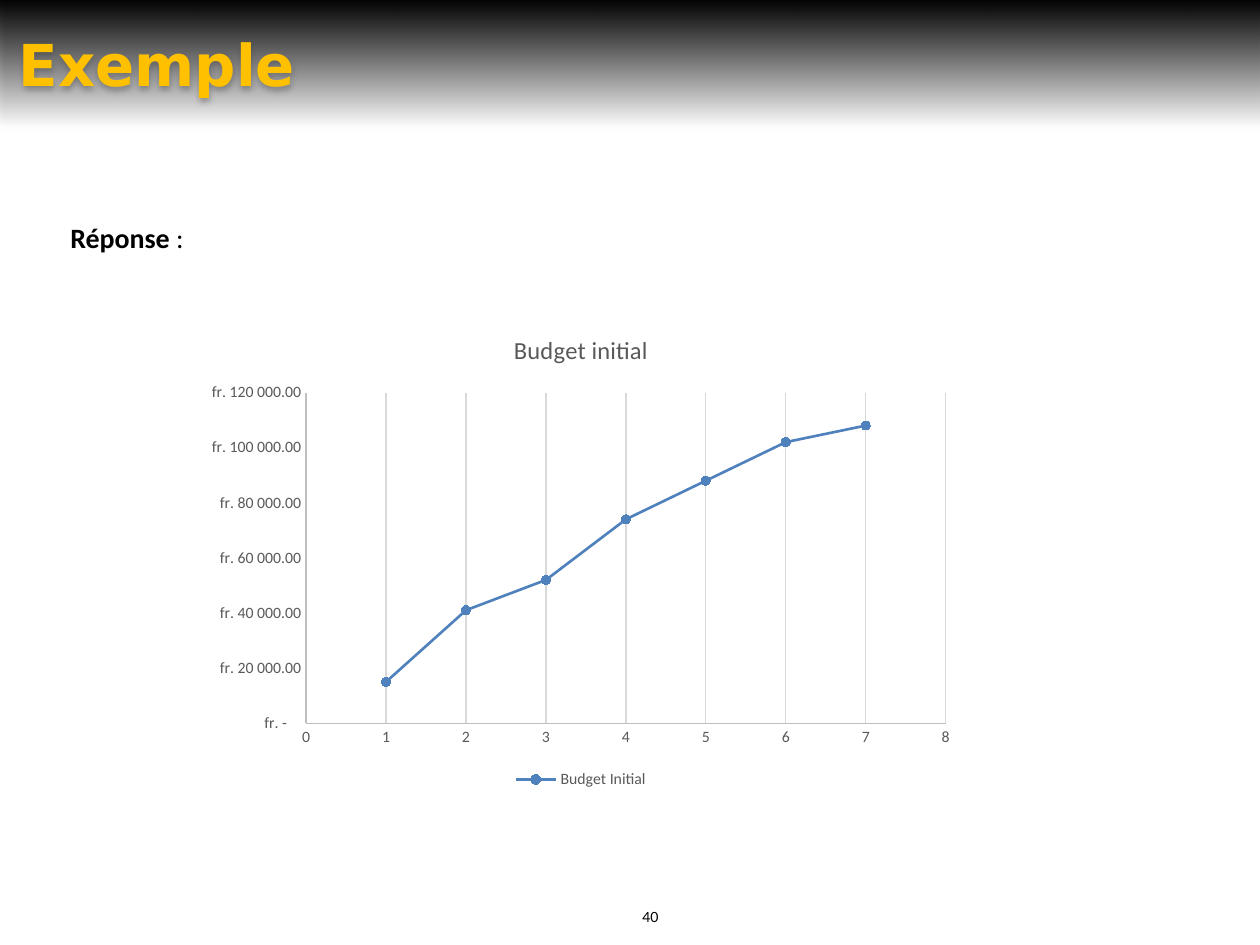
from dataclasses import dataclass

from lxml import etree
from pptx import Presentation
from pptx.chart.data import XyChartData
from pptx.dml.color import RGBColor
from pptx.enum.chart import XL_CHART_TYPE, XL_LEGEND_POSITION, XL_MARKER_STYLE, XL_TICK_MARK
from pptx.enum.shapes import MSO_SHAPE
from pptx.enum.text import MSO_ANCHOR, PP_ALIGN
from pptx.oxml import parse_xml
from pptx.oxml.ns import nsdecls, qn
from pptx.util import Inches, Pt

SCATTER = XL_CHART_TYPE.XY_SCATTER_LINES
BOTTOM = XL_LEGEND_POSITION.BOTTOM
CIRCLE = XL_MARKER_STYLE.CIRCLE
NO_TICK = XL_TICK_MARK.NONE
RECTANGLE = MSO_SHAPE.RECTANGLE
TOP, MIDDLE = MSO_ANCHOR.TOP, MSO_ANCHOR.MIDDLE
LEFT = PP_ALIGN.LEFT

WIDTH, HEIGHT = Inches(10), Inches(7.5)
COLUMNS, ROWS = 100, 75
COLORS = {
    "white": "FFFFFF",
    "black": "000000",
    "fade": "4B4B4B",
    "gold": "FFC000",
    "label": "595959",
    "axis": "BFBFBF",
    "grid": "D9D9D9",
    "series": "4F81BD",
}
BUDGET = [15000, 41000, 52000, 74000, 88000, 102000, 108000]
FRANCS = '"fr. "# ##0.00;"fr. "-# ##0.00;"fr. -"_0_0'


@dataclass(frozen=True)
class Area:
    column: float
    row: float
    columns: float
    rows: float

    def bounds(self) -> tuple[int, int, int, int]:
        across, down = WIDTH / COLUMNS, HEIGHT / ROWS
        return (round(self.column * across), round(self.row * down),
                round(self.columns * across), round(self.rows * down))


@dataclass(frozen=True)
class Span:
    text: str
    bold: bool = False


def color(name: str) -> RGBColor:
    return RGBColor.from_string(COLORS[name])


def style_font(font, size: float, shade: str, face: str = "Calibri", bold: bool = False) -> None:
    font.size, font.name, font.bold = Pt(size), face, bold
    font.color.rgb = color(shade)


def style_line(line, shade: str, width: float) -> None:
    line.color.rgb = color(shade)
    line.width = Pt(width)


def write_text(box, *spans: Span, size: float, face: str, shade: str = "black",
               anchor=TOP, margins=(0.1, 0.05, 0.1, 0.05)) -> None:
    frame = box.text_frame
    frame.word_wrap = True
    frame.vertical_anchor = anchor
    (frame.margin_left, frame.margin_top,
     frame.margin_right, frame.margin_bottom) = map(Inches, margins)
    para = frame.paragraphs[0]
    para.alignment = LEFT
    for span in spans:
        run = para.add_run()
        run.text = span.text
        style_font(run.font, size, shade, face, span.bold)


def add_rectangle(page, area: Area):
    shape = page.shapes.add_shape(RECTANGLE, *area.bounds())
    shape.shadow.inherit = False
    return shape


def add_backdrop(page) -> None:
    backdrop = add_rectangle(page, Area(0, 0, COLUMNS, ROWS))
    backdrop.fill.solid()
    backdrop.fill.fore_color.rgb = color("white")
    style_line(backdrop.line, "white", 2)


def add_banner(page, title: str) -> None:
    banner = add_rectangle(page, Area(0, 0, 100.2, 10))
    banner.line.fill.background()
    properties = banner._element.spPr
    gradient = parse_xml(
        f'<a:gradFill {nsdecls("a")} rotWithShape="1"><a:gsLst>'
        f'<a:gs pos="0"><a:srgbClr val="{COLORS["fade"]}"><a:alpha val="0"/></a:srgbClr></a:gs>'
        f'<a:gs pos="100000"><a:srgbClr val="{COLORS["black"]}"/></a:gs>'
        '</a:gsLst><a:lin ang="16200000" scaled="0"/></a:gradFill>')
    properties.find(qn("a:prstGeom")).addnext(gradient)
    shadow = etree.SubElement(properties.find(qn("a:effectLst")), qn("a:outerShdw"),
                              blurRad=str(Pt(3.1)), dist=str(Pt(1.8)),
                              dir="5400000", rotWithShape="0")
    tint = etree.SubElement(shadow, qn("a:srgbClr"), val=COLORS["black"])
    etree.SubElement(tint, qn("a:alpha"), val="35000")
    write_text(banner, Span(title, bold=True), size=33, face="DejaVu Sans", shade="gold",
               anchor=MIDDLE, margins=(0.15,) * 4)


def style_axis(axis, maximum: float, step: float) -> None:
    axis.minimum_scale, axis.maximum_scale, axis.major_unit = 0, maximum, step
    axis.major_tick_mark = axis.minor_tick_mark = NO_TICK
    style_font(axis.tick_labels.font, 9, "label")
    style_line(axis.format.line, "axis", 0.75)


def add_budget_chart(page, area: Area) -> None:
    data = XyChartData()
    points = data.add_series("Budget Initial")
    for period, amount in enumerate(BUDGET, start=1):
        points.add_data_point(period, amount)
    chart = page.shapes.add_chart(SCATTER, *area.bounds(), data).chart
    style_font(chart.font, 10, "black")

    chart.has_title = True
    chart.chart_title.include_in_layout = False
    para = chart.chart_title.text_frame.paragraphs[0]
    span = para.add_run()
    span.text = "Budget initial"
    style_font(span.font, 14, "label")

    chart.has_legend = True
    chart.legend.position = BOTTOM
    chart.legend.include_in_layout = False
    style_font(chart.legend.font, 9, "label")

    periods, amounts = chart.category_axis, chart.value_axis
    style_axis(periods, 8, 1)
    periods.has_major_gridlines = True
    style_line(periods.major_gridlines.format.line, "grid", 0.75)
    style_axis(amounts, 120000, 20000)
    amounts.has_major_gridlines = False
    amounts.tick_labels.number_format = FRANCS
    amounts.tick_labels.number_format_is_linked = False

    plot = chart.plots[0]
    plot.vary_by_categories = False
    series = plot.series[0]
    style_line(series.format.line, "series", 1.5)
    series.marker.style, series.marker.size = CIRCLE, 5
    series.marker.format.fill.solid()
    series.marker.format.fill.fore_color.rgb = color("series")
    style_line(series.marker.format.line, "series", 0.75)


def main() -> None:
    deck = Presentation()
    deck.slide_width, deck.slide_height = WIDTH, HEIGHT
    page = deck.slides.add_slide(deck.slide_layouts[6])
    add_backdrop(page)
    add_banner(page, "Exemple")
    number = page.shapes.add_textbox(*Area(50, 71.6, 32.7, 2.4).bounds())
    write_text(number, Span("40"), size=8, face="Lato")
    answer = page.shapes.add_textbox(*Area(4.6, 14.3, 81.1, 46.5).bounds())
    write_text(answer, Span("Réponse", bold=True), Span(" :"), size=16, face="Calibri",
               margins=(0.1, 0.32, 0.1, 0.05))
    add_budget_chart(page, Area(15.6, 24.8, 61, 38.2))
    deck.save("out.pptx")


if __name__ == "__main__":
    main()
